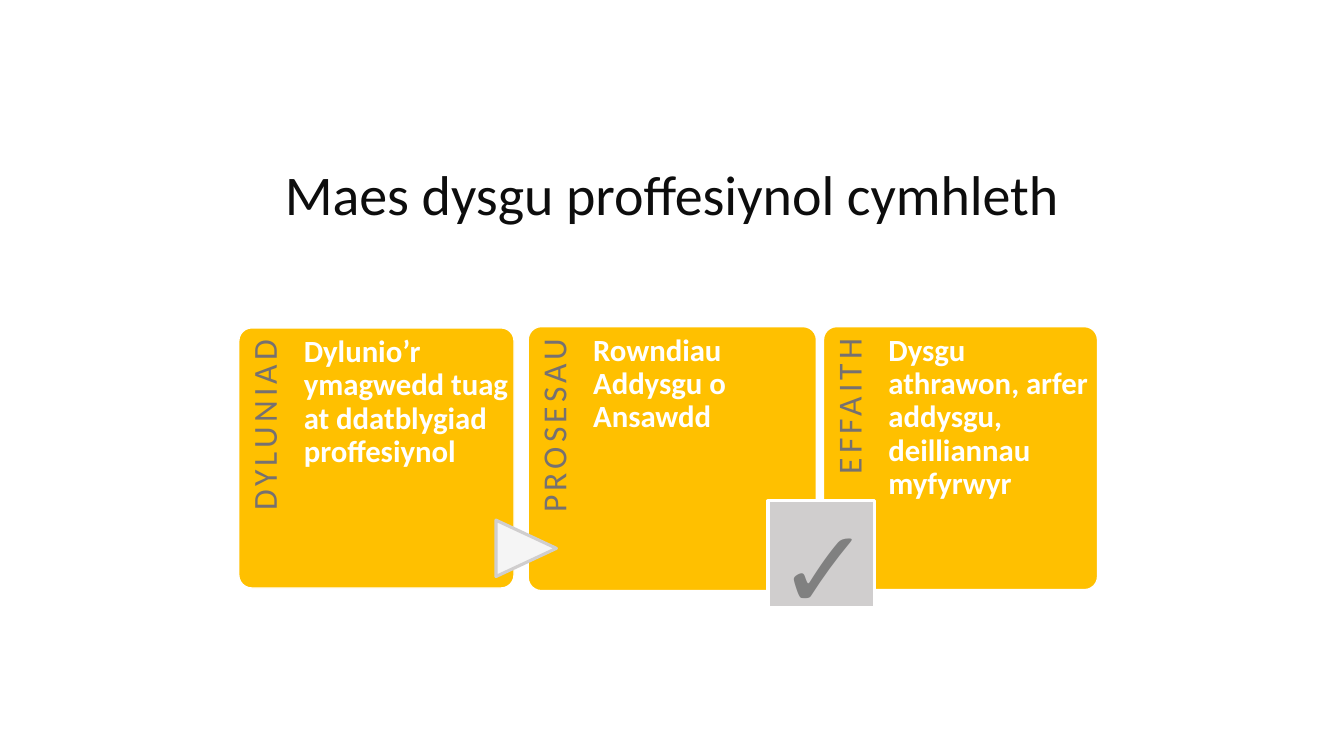
from dataclasses import dataclass

from lxml import etree
from pptx import Presentation
from pptx import util as u
from pptx.dml.color import RGBColor
from pptx.enum import shapes, text
from pptx.oxml import ns

FONT = "Calibri"
COLOURS = {
    "gold": "FFC000",
    "white": "FFFFFF",
    "label": "767171",
    "arrow": "F5F5F5",
    "silver": "D0CECE",
    "tick": "808080",
    "title": "0D0D0D",
}


@dataclass
class Box:
    left: float
    top: float
    width: float
    height: float

    def lengths(self) -> list:
        return [u.Pt(value) for value in (self.left, self.top, self.width, self.height)]


@dataclass
class Card:
    box: Box
    label: str
    body: str


@dataclass
class Style:
    size: float
    colour: str
    bold: bool = False
    align: text.PP_ALIGN = text.PP_ALIGN.LEFT
    line_spacing: float = 1.0
    tracking: float = 0
    outline: float = 0
    anchor: text.MSO_ANCHOR = text.MSO_ANCHOR.TOP
    insets: tuple = (7.2, 3.6, 7.2, 3.6)


LABEL = Style(24, "label", align=text.PP_ALIGN.RIGHT, line_spacing=0.9,
              tracking=3, insets=(0, 6.5, 8.6, 0))
BODY = Style(22, "white", bold=True, line_spacing=0.9, insets=(0, 5.8, 0, 0))
TICK = Style(80, "tick", bold=True, outline=2.25, anchor=text.MSO_ANCHOR.MIDDLE)
TITLE = Style(40, "title", align=text.PP_ALIGN.CENTER, line_spacing=0.85)

CARDS = [
    Card(Box(170.6, 234.2, 196.6, 185.8), "DYLUNIAD",
         "Dylunio’r ymagwedd tuag at ddatblygiad proffesiynol"),
    Card(Box(377.3, 233.3, 205.9, 188.6), "PROSESAU",
         "Rowndiau Addysgu o Ansawdd"),
    Card(Box(588.2, 233.3, 195.8, 187.9), "EFFAITH",
         "Dysgu athrawon, arfer addysgu, deilliannau myfyrwyr"),
]
BODY_OFFSET = 46.4


def rgb(name: str) -> RGBColor:
    return RGBColor.from_string(COLOURS[name])


def add_panel(slide, kind, box: Box, fill: str, line: str, line_width: float):
    shape = slide.shapes.add_shape(kind, *box.lengths())
    shape.shadow.inherit = False
    shape.fill.solid()
    shape.fill.fore_color.rgb = rgb(fill)
    shape.line.color.rgb = rgb(line)
    shape.line.width = u.Pt(line_width)
    return shape


def add_outline(properties, width: float) -> None:
    line = etree.Element(ns.qn("a:ln"), w=str(int(u.Pt(width))))
    fill = etree.SubElement(line, ns.qn("a:solidFill"))
    etree.SubElement(fill, ns.qn("a:srgbClr"), val=COLOURS["white"])
    properties.insert(0, line)


def add_text(slide, box: Box, words: str, style: Style):
    shape = slide.shapes.add_textbox(*box.lengths())
    frame = shape.text_frame
    frame.word_wrap = True
    frame.vertical_anchor = style.anchor
    (frame.margin_left, frame.margin_top,
     frame.margin_right, frame.margin_bottom) = map(u.Pt, style.insets)
    paragraph = frame.paragraphs[0]
    paragraph.alignment = style.align
    paragraph.line_spacing = style.line_spacing
    run = paragraph.add_run()
    run.text = words
    run.font.name = FONT
    run.font.size = u.Pt(style.size)
    run.font.bold = style.bold
    run.font.color.rgb = rgb(style.colour)
    properties = run.font._element
    if style.tracking:
        properties.set("spc", str(int(style.tracking * 100)))
    if style.outline:
        add_outline(properties, style.outline)
    return shape


def add_card(slide, card: Card) -> None:
    box = card.box
    panel = add_panel(slide, shapes.MSO_SHAPE.ROUNDED_RECTANGLE, box, "gold", "white", 1)
    panel.adjustments[0] = 0.05

    # The label turns about its centre to fill a strip on the card's left
    length, strip = 0.82 * box.height, 0.2 * box.width
    label_box = Box(box.left + (strip - length) / 2,
                    box.top + (length - strip) / 2, length, strip)
    add_text(slide, label_box, card.label, LABEL).rotation = 270

    body_box = Box(box.left + BODY_OFFSET, box.top, 0.745 * box.width, box.height)
    add_text(slide, body_box, card.body, BODY)


def main() -> None:
    presentation = Presentation()
    presentation.slide_width = u.Pt(960)
    presentation.slide_height = u.Pt(540)
    slide = presentation.slides.add_slide(presentation.slide_layouts[6])

    # Three cards
    for card in CARDS:
        add_card(slide, card)

    # Arrow between the first two cards
    arrow = add_panel(slide, shapes.MSO_SHAPE.FLOWCHART_EXTRACT,
                      Box(355.7, 370.1, 40.3, 43.2), "arrow", "silver", 2.25)
    arrow.rotation = 90

    # Tick between the last two cards
    add_panel(slide, shapes.MSO_SHAPE.RECTANGLE,
              Box(548.6, 357.8, 76.3, 76.3), "silver", "white", 2.25)
    add_text(slide, Box(548.6, 351.4, 59.8, 104.4), "✓", TICK)

    # Title
    add_text(slide, Box(146.2, 118.1, 667.4, 49), "Maes dysgu proffesiynol cymhleth", TITLE)

    presentation.save("out.pptx")


if __name__ == "__main__":
    main()
